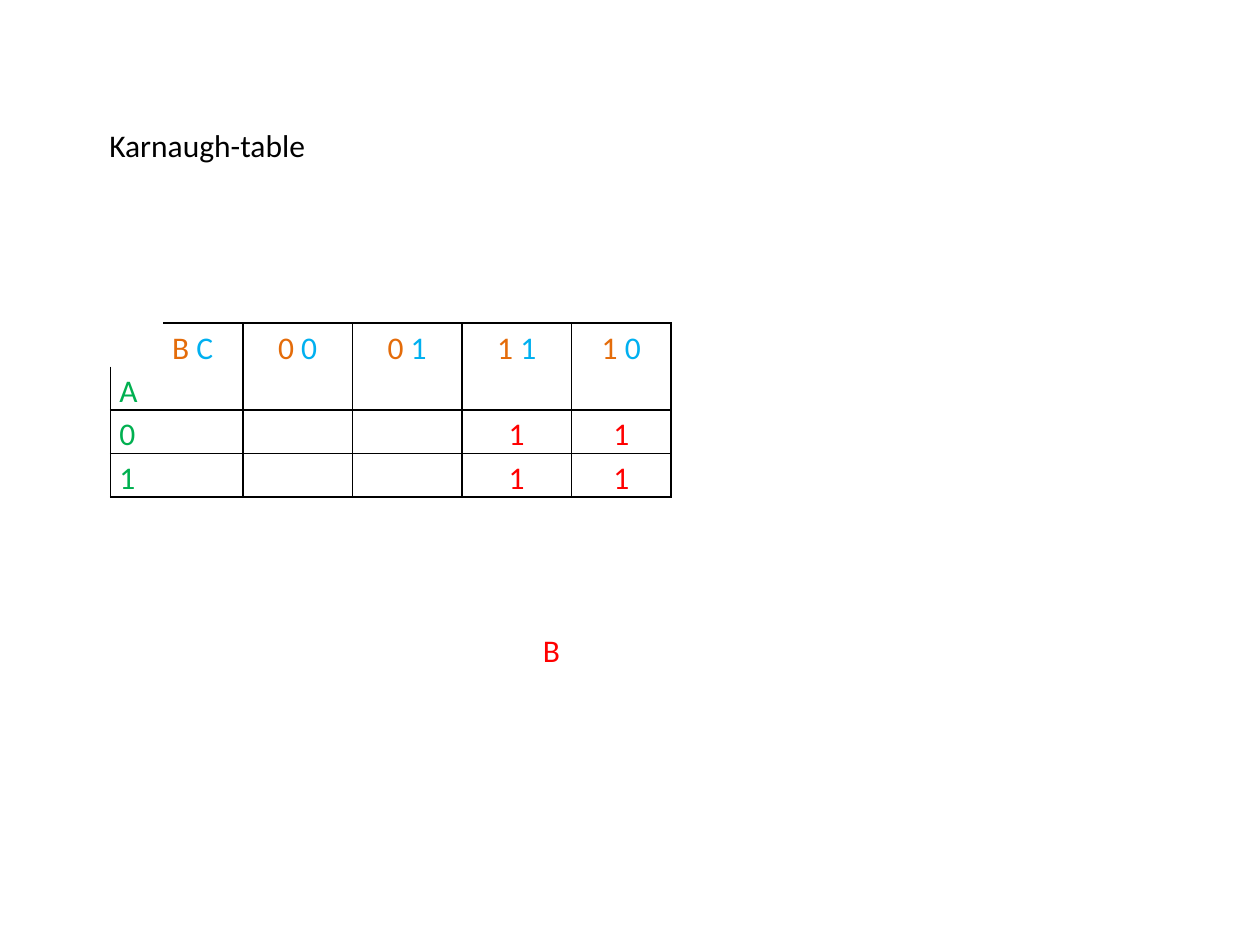
from lxml import etree
from pptx import Presentation
from pptx.dml.color import RGBColor
from pptx.enum.text import MSO_ANCHOR, PP_ALIGN
from pptx.oxml.ns import qn
from pptx.util import Pt

LEFT, CENTER = PP_ALIGN.LEFT, PP_ALIGN.CENTER
TOP, MIDDLE = MSO_ANCHOR.TOP, MSO_ANCHOR.MIDDLE
BLACK, RED, GREEN, ORANGE, BLUE = "000000", "FF0000", "00B050", "E46C0A", "00B0F0"


def color(value):
    return RGBColor.from_string(value)


def add_runs(paragraph, runs):
    for text, value in runs:
        run = paragraph.add_run()
        run.text = text
        for name, setting in {"name": "Calibri", "size": Pt(18)}.items():
            setattr(run.font, name, setting)
        run.font.color.rgb = color(value)


presentation = Presentation()
presentation.slide_width, presentation.slide_height = Pt(720), Pt(540)
slide = presentation.slides.add_slide(presentation.slide_layouts[6])

# Title and resulting term
for text, value, box, wrap in [
    ("Karnaugh-table", BLACK, (55.4, 68.4, 395.3, 51.1), True),
    ("B", RED, (303.1, 357.1, 24.5, 28.8), False),
]:
    shape = slide.shapes.add_textbox(*map(Pt, box))
    shape.text_frame.word_wrap = wrap
    add_runs(shape.text_frame.paragraphs[0], [(text, value)])

# Karnaugh grid
column_widths = [30.2, 45.4, 62.6, 62.6, 62.6, 56.9, 59.8]
row_heights = [24.85] * 4 + [49.7]
table = slide.shapes.add_table(
    len(row_heights), len(column_widths), Pt(63.2), Pt(184.7),
    Pt(sum(column_widths)), Pt(sum(row_heights))).table
table.first_row = table.horz_banding = False
for column, width in zip(table.columns, column_widths):
    column.width = Pt(width)
for row, height in zip(table.rows, row_heights):
    row.height = Pt(height)

# Cell contents: runs, alignment, anchor
contents = {
    (0, 1): ([("B ", ORANGE), ("C", BLUE)], LEFT, TOP),
    (1, 0): ([("A", GREEN)], LEFT, TOP),
}
for column, (b, c) in enumerate(["00", "01", "11", "10"], start=2):
    contents[0, column] = ([(b + " ", ORANGE), (c, BLUE)], CENTER, TOP)
for row, a in [(2, "0"), (3, "1")]:
    contents[row, 0] = ([(a, GREEN)], LEFT, TOP)
    for column in (4, 5):
        contents[row, column] = ([("1", RED)], CENTER, MIDDLE)

# Sides with a border: all, except around the corner and the outer strips
sides = {(0, 0): "", (0, 1): "RTB", (1, 0): "LB", (1, 1): "RB", (4, 6): ""}
sides.update({(4, column): "T" for column in range(6)})
sides.update({(row, 6): "L" for row in range(4)})

cell_format = {"margin_left": Pt(5), "margin_right": Pt(5),
               "margin_top": 0, "margin_bottom": 0}
for row in range(len(row_heights)):
    for column in range(len(column_widths)):
        cell = table.cell(row, column)
        for name, setting in cell_format.items():
            setattr(cell, name, setting)
        cell.fill.background()
        if (row, column) in contents:
            runs, alignment, anchor = contents[row, column]
            cell.vertical_anchor = anchor
            paragraph = cell.text_frame.paragraphs[0]
            paragraph.alignment, paragraph.line_spacing = alignment, 1.15
            add_runs(paragraph, runs)
        properties = cell._tc.get_or_add_tcPr()
        for index, side in enumerate("LRTB"):
            line = etree.Element(qn("a:ln" + side), w=str(Pt(1)))
            properties.insert(index, line)
            if side in sides.get((row, column), "LRTB"):
                fill = etree.SubElement(line, qn("a:solidFill"))
                etree.SubElement(fill, qn("a:srgbClr"), val=BLACK)
            else:
                etree.SubElement(line, qn("a:noFill"))

# Header cells span two rows, row labels and the strip below span two columns
for column in range(1, 6):
    table.cell(0, column).merge(table.cell(1, column))
for row in range(2, 5):
    table.cell(row, 0).merge(table.cell(row, 1))

presentation.save("out.pptx")
